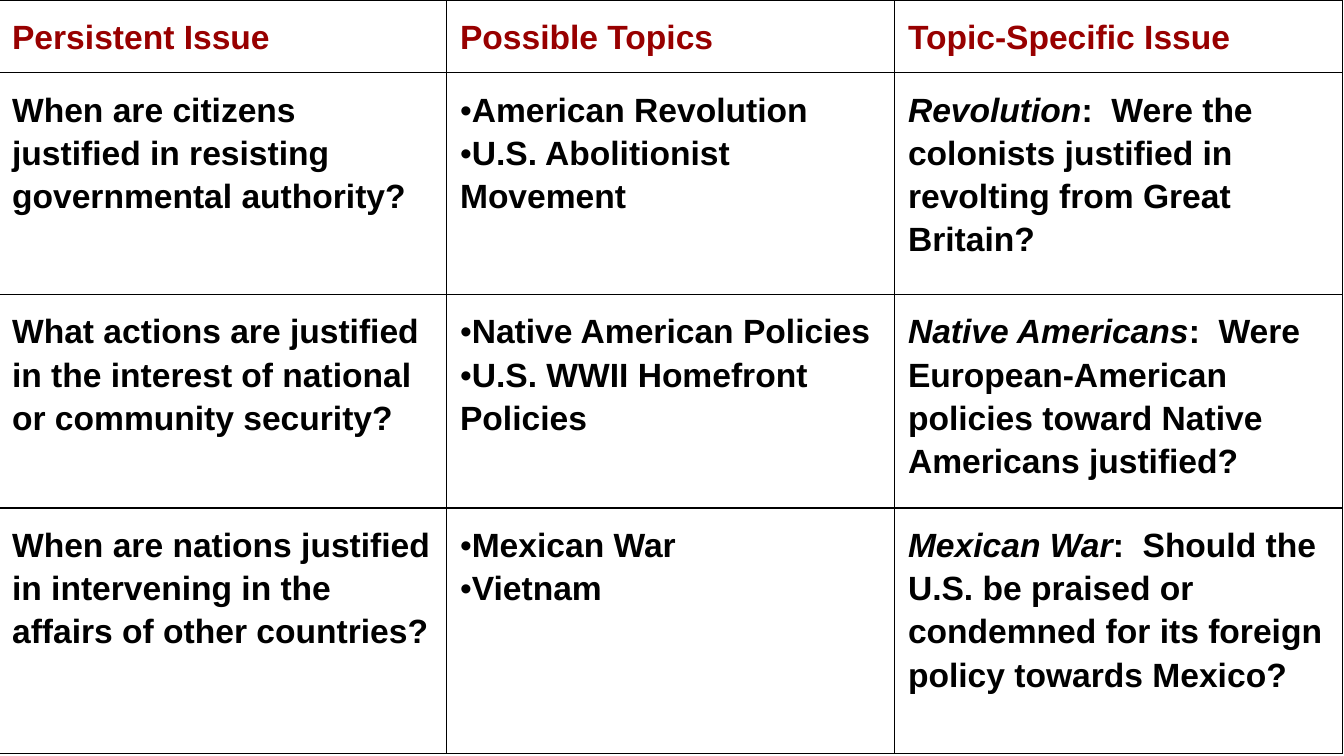
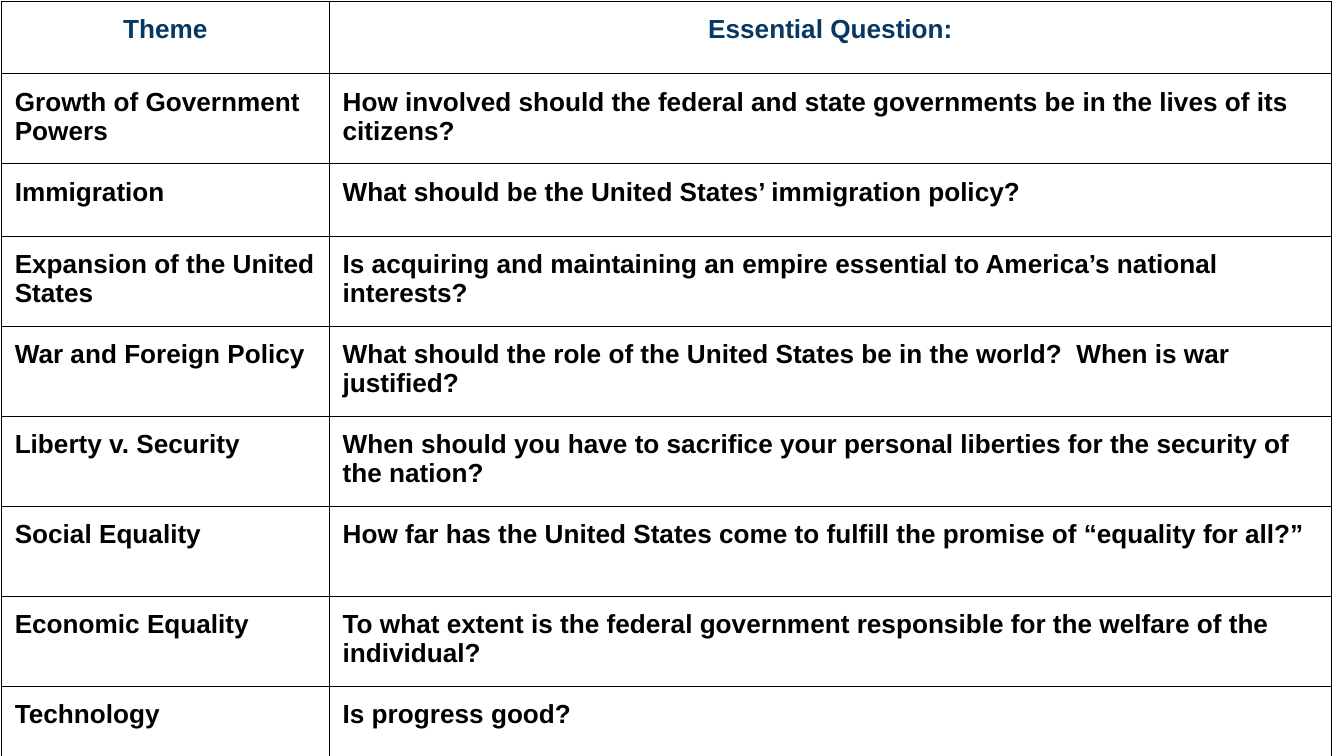
from lxml import etree
from pptx import Presentation
from pptx.dml.color import RGBColor
from pptx.enum.text import PP_ALIGN
from pptx.oxml.ns import qn
from pptx.util import Inches, Pt

LEFT, CENTER = PP_ALIGN.LEFT, PP_ALIGN.CENTER
COLORS = {"text": "000000", "border": "000000", "issue": "980000", "theme": "073763"}
FONT = "Arial"
SLIDE_WIDTH = 10
SLIDE_HEIGHT = SLIDE_WIDTH * 9 / 16
CELL_MARGIN = Inches(0.1)
BORDER_WIDTH = Pt(0.75)
BLANK_LAYOUT = 6


def write_text(cell, text, size, color, align=LEFT, line_spacing=1.0):
    for index, line in enumerate(text.split("\n")):
        frame = cell.text_frame
        paragraph = frame.add_paragraph() if index else frame.paragraphs[0]
        paragraph.alignment = align
        paragraph.line_spacing = line_spacing
        lead, separator, rest = line.partition("|")
        parts = [lead, rest] if separator else [line]
        for part in parts:
            run = paragraph.add_run()
            run.text = part
            font = run.font
            font.name, font.size = FONT, Pt(size)
            font.color.rgb = RGBColor.from_string(COLORS[color])
            font.bold = part != "•"
            font.italic = len(parts) == 2 and part == lead and font.bold


def add_grid(slide, left, top, column_widths, row_heights, rows, header_color, header_align, size, line_spacing):
    table = slide.shapes.add_table(
        len(rows), len(column_widths), Inches(left), Inches(top),
        Inches(sum(column_widths)), Inches(sum(row_heights))).table
    table.first_row = table.horz_banding = False
    for column, width in zip(table.columns, column_widths):
        column.width = Inches(width)
    for row_index, (row, height, texts) in enumerate(zip(table.rows, row_heights, rows)):
        row.height = Inches(height)
        color, align = ("text", LEFT) if row_index else (header_color, header_align)
        for cell, text in zip(row.cells, texts):
            cell.margin_left = cell.margin_right = CELL_MARGIN
            cell.margin_top = cell.margin_bottom = CELL_MARGIN
            properties = cell._tc.get_or_add_tcPr()
            for side in ("lnL", "lnR", "lnT", "lnB"):
                line = etree.SubElement(properties, qn(f"a:{side}"), w=str(BORDER_WIDTH))
                fill = etree.SubElement(line, qn("a:solidFill"))
                etree.SubElement(fill, qn("a:srgbClr"), val=COLORS["border"])
            cell.fill.background()
            write_text(cell, text, size, color, align, line_spacing)


ISSUE_ROWS = [
    ("Persistent Issue", "Possible Topics", "Topic-Specific Issue"),
    ("When are citizens justified in resisting governmental authority?",
     "•|American Revolution\n•|U.S. Abolitionist Movement",
     "Revolution|:  Were the colonists justified in revolting from Great Britain?"),
    ("What actions are justified in the interest of national or community security?",
     "•|Native American Policies\n•|U.S. WWII Homefront Policies",
     "Native Americans|:  Were European-American policies toward Native Americans justified?"),
    ("When are nations justified in intervening in the affairs of other countries?",
     "•|Mexican War\n•|Vietnam",
     "Mexican War|:  Should the U.S. be praised or condemned for its foreign policy towards Mexico?"),
]

THEME_ROWS = [
    ("Theme", "Essential Question:"),
    ("Growth of Government Powers",
     "How involved should the federal and state governments be in the lives of its citizens?"),
    ("Immigration", "What should be the United States’ immigration policy?"),
    ("Expansion of the United States",
     "Is acquiring and maintaining an empire essential to America’s national interests?"),
    ("War and Foreign Policy",
     "What should the role of the United States be in the world?  When is war justified?"),
    ("Liberty v. Security",
     "When should you have to sacrifice your personal liberties for the security of the nation?"),
    ("Social Equality",
     "How far has the United States come to fulfill the promise of “equality for all?”"),
    ("Economic Equality",
     "To what extent is the federal government responsible for the welfare of the individual?"),
    ("Technology", "Is progress good?"),
]

SHORT_ROW, TALL_ROW = 0.54, 0.67

presentation = Presentation()
presentation.slide_width = Inches(SLIDE_WIDTH)
presentation.slide_height = Inches(SLIDE_HEIGHT)
layout = presentation.slide_layouts[BLANK_LAYOUT]

issue_slide = presentation.slides.add_slide(layout)
add_grid(issue_slide, -0.01, 0, [SLIDE_WIDTH / 3] * 3, [SHORT_ROW, 1.65, 1.59, 1.83],
         ISSUE_ROWS, "issue", LEFT, size=18, line_spacing=1.15)

theme_slide = presentation.slides.add_slide(layout)
theme_heights = [SHORT_ROW, TALL_ROW, SHORT_ROW] + [TALL_ROW] * 5 + [SHORT_ROW]
add_grid(theme_slide, 0.01, 0.01, [2.44, 7.46], theme_heights,
         THEME_ROWS, "theme", CENTER, size=14, line_spacing=1.0)

presentation.save("out.pptx")
